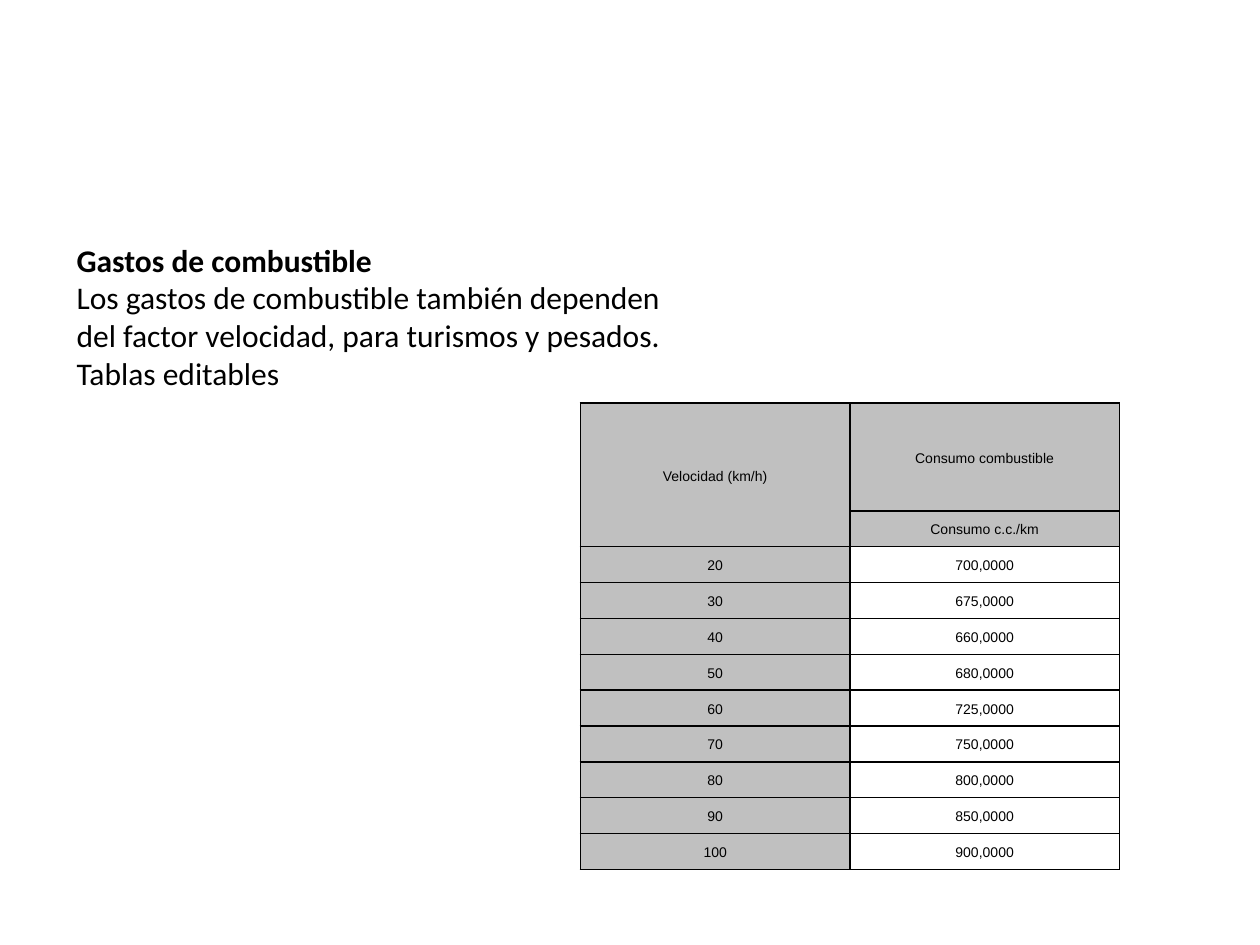
from lxml.etree import SubElement
from pptx import Presentation
from pptx.dml.color import RGBColor as RGB
from pptx.enum.text import MSO_ANCHOR as ANCHOR, MSO_AUTO_SIZE as AUTO, PP_ALIGN as ALIGN
from pptx.oxml.ns import qn
from pptx.util import Pt

COLORS = {"text": "000000", "border": "000000", "label": "C0C0C0"}
HEADERS = [("Velocidad (km/h)", "Consumo combustible"), ("", "Consumo c.c./km")]
CONSUMPTION = [700, 675, 660, 680, 725, 750, 800, 850, 900]
INTRO = [
    "Gastos de combustible",
    "Los gastos de combustible también dependen del factor velocidad, "
    "para turismos y pesados.",
    "Tablas editables",
]


def style_font(font, name, size, bold=False):
    font.name, font.size, font.bold = name, Pt(size), bold
    font.color.rgb = RGB.from_string(COLORS["text"])


def add_borders(cell):
    props = cell._tc.get_or_add_tcPr()
    for side in ("lnL", "lnR", "lnT", "lnB"):
        line = SubElement(props, qn(f"a:{side}"), w=str(Pt(1)))
        fill = SubElement(line, qn("a:solidFill"))
        SubElement(fill, qn("a:srgbClr"), val=COLORS["border"])


def style_cell(cell, text, shaded):
    cell.vertical_anchor = ANCHOR.MIDDLE
    cell.margin_left = cell.margin_right = Pt(3.6)
    cell.margin_top = cell.margin_bottom = 0
    add_borders(cell)
    if shaded:
        cell.fill.solid()
        cell.fill.fore_color.rgb = RGB.from_string(COLORS["label"])
    else:
        cell.fill.background()
    p = cell.text_frame.paragraphs[0]
    p.text = text
    p.alignment = ALIGN.CENTER
    p.line_spacing = 1.15
    style_font(p.font, "Arial", 8)
    for r in p.runs:
        style_font(r.font, "Arial", 8)


def add_intro(s, x, y, w, h):
    tf = s.shapes.add_textbox(Pt(x), Pt(y), Pt(w), Pt(h)).text_frame
    tf.word_wrap = True
    tf.auto_size = AUTO.SHAPE_TO_FIT_TEXT
    tf.text = "\n".join(INTRO)
    for i, p in enumerate(tf.paragraphs):
        for r in p.runs:
            style_font(r.font, "Calibri", 18, bold=i == 0)


def add_fuel_table(s, x, y, w, h):
    rows = HEADERS + [
        (str(20 + 10 * i), f"{value},0000") for i, value in enumerate(CONSUMPTION)
    ]
    table = s.shapes.add_table(len(rows), 2, Pt(x), Pt(y), Pt(w), Pt(h)).table
    for column in table.columns:
        column.width = Pt(w / 2)
    unit = h / (len(rows) + 2)
    for i, texts in enumerate(rows):
        table.rows[i].height = Pt(unit * (3 if i == 0 else 1))
        for j, text in enumerate(texts):
            style_cell(table.cell(i, j), text, i < len(HEADERS) or j == 0)
    table.cell(0, 0).merge(table.cell(1, 0))


def main():
    prs = Presentation()
    prs.slide_width, prs.slide_height = Pt(720), Pt(540)
    s = prs.slides.add_slide(prs.slide_layouts[6])
    add_fuel_table(s, 331.7, 230.4, 308, 266.5)
    add_intro(s, 36.7, 134, 357, 116.6)
    prs.save("out.pptx")


if __name__ == "__main__":
    main()
